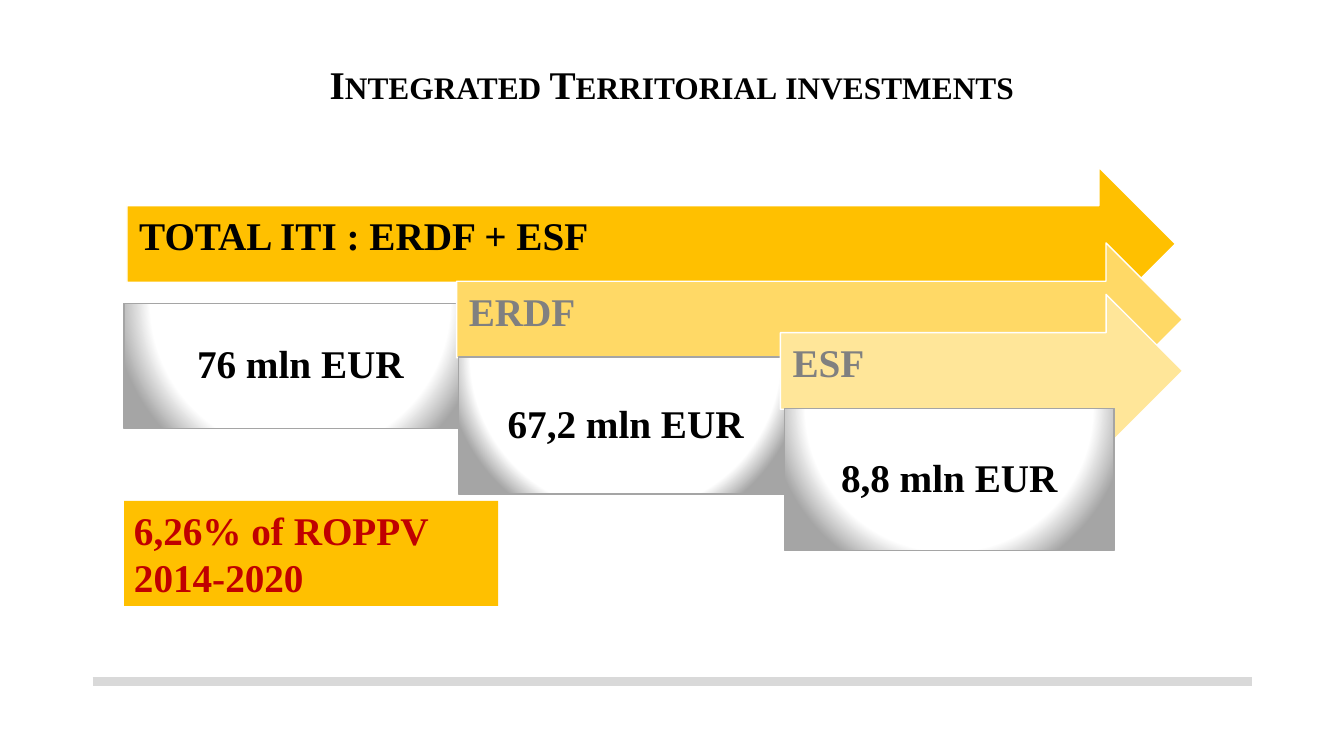
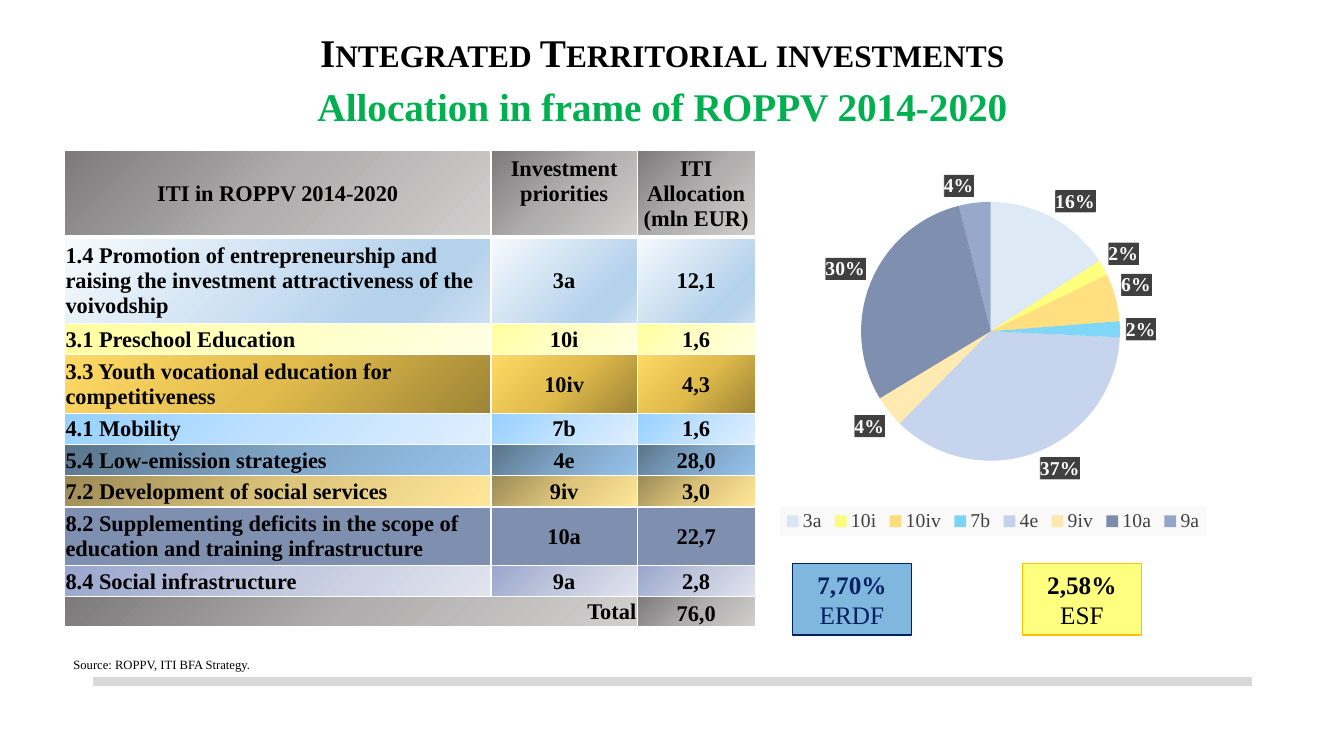
from dataclasses import dataclass

from lxml import etree
from pptx import Presentation
from pptx.chart.data import CategoryChartData
from pptx.dml.color import RGBColor
from pptx.enum.chart import XL_CHART_TYPE, XL_LABEL_POSITION, XL_LEGEND_POSITION
from pptx.enum.shapes import MSO_CONNECTOR, MSO_SHAPE
from pptx.enum.text import MSO_ANCHOR, PP_ALIGN
from pptx.oxml import parse_xml
from pptx.oxml.ns import nsdecls, qn
from pptx.util import Inches, Pt

LEFT, CENTER, RIGHT = PP_ALIGN.LEFT, PP_ALIGN.CENTER, PP_ALIGN.RIGHT
TOP, MIDDLE, BOTTOM = MSO_ANCHOR.TOP, MSO_ANCHOR.MIDDLE, MSO_ANCHOR.BOTTOM
RECTANGLE, ARROW = MSO_SHAPE.RECTANGLE, MSO_SHAPE.RIGHT_ARROW
STRAIGHT = MSO_CONNECTOR.STRAIGHT
PIE = XL_CHART_TYPE.PIE
LEGEND_BOTTOM = XL_LEGEND_POSITION.BOTTOM
OUTSIDE_END = XL_LABEL_POSITION.OUTSIDE_END

BLACK = RGBColor(0x00, 0x00, 0x00)
WHITE = RGBColor(0xFF, 0xFF, 0xFF)
GREY = RGBColor(0x80, 0x80, 0x80)
SILVER = RGBColor(0xA5, 0xA5, 0xA5)
RULE_GREY = RGBColor(0xD9, 0xD9, 0xD9)
CHARCOAL = RGBColor(0x40, 0x40, 0x40)
AMBER = RGBColor(0xFF, 0xC0, 0x00)
GOLD = RGBColor(0xFF, 0xD9, 0x66)
PALE_GOLD = RGBColor(0xFF, 0xE6, 0x99)
YELLOW = RGBColor(0xFF, 0xFF, 0x00)
RED = RGBColor(0xC0, 0x00, 0x00)
GREEN = RGBColor(0x00, 0xB0, 0x50)
NAVY = RGBColor(0x00, 0x20, 0x60)
BLUE = RGBColor(0x00, 0x70, 0xC0)
SKY = RGBColor(0x00, 0xB0, 0xF0)
PALE_BLUE = RGBColor(0xBD, 0xD7, 0xEE)
PERIWINKLE = RGBColor(0x8F, 0xAA, 0xDC)
DEEP_BLUE = RGBColor(0x2F, 0x55, 0x97)

FONT = "Times New Roman"
TITLE = "Integrated Territorial investments"
GRID = Inches(0.1)  # one column or row of the layout grid
DIAGONAL = '<a:lin ang="2700000" scaled="0"/>'
REVERSE = '<a:lin ang="13500000" scaled="0"/>'
CIRCLE = '<a:path path="circle"><a:fillToRect l="{}" t="{}" r="{}" b="{}"/></a:path>'
CORNER = CIRCLE.format(0, 0, 100000, 100000)
BOWL = CIRCLE.format(50000, -80000, 50000, 180000)


@dataclass
class Box:
    """A region in grid columns and rows."""
    left: float
    top: float
    width: float
    height: float

    def inner(self, left, top, width, height):
        return Box(self.left + left, self.top + top, width, height)

    def place(self):
        return [round(n * GRID) for n in (self.left, self.top, self.width, self.height)]


@dataclass
class Gradient:
    stops: list
    direction: str = DIAGONAL


@dataclass
class Tint:
    """A colour at half strength."""
    color: RGBColor


def three_step(start, middle, end, direction=DIAGONAL):
    return Gradient([(0, start), (50, middle), (100, end)], direction)


def apply(target, values):
    for name, value in values.items():
        setattr(target, name, value)


def paint(fill, look):
    """Fill with a colour, a Tint or a Gradient."""
    fill.solid()
    fill.fore_color.rgb = look.color if isinstance(look, Tint) else WHITE
    solid = fill._xPr.find(qn("a:solidFill"))
    if isinstance(look, Tint):
        etree.SubElement(solid[0], qn("a:alpha"), val="50000")
    elif isinstance(look, Gradient):
        stops = "".join(
            f'<a:gs pos="{position * 1000}"><a:srgbClr val="{color}"/></a:gs>'
            for position, color in look.stops)
        solid.getparent().replace(solid, parse_xml(
            f'<a:gradFill {nsdecls("a")} rotWithShape="1"><a:gsLst>{stops}</a:gsLst>'
            f'{look.direction}</a:gradFill>'))
    else:
        fill.fore_color.rgb = look


def set_font(font, size, color, bold=False):
    apply(font, {"name": FONT, "size": Pt(size), "bold": bold})
    font.color.rgb = color


def write(frame, lines, align=LEFT, spacing=None):
    """Each line is (text, size, color, bold) with an optional small-caps flag."""
    for index, (text, size, color, bold, *small) in enumerate(lines):
        paragraph = frame.add_paragraph() if index else frame.paragraphs[0]
        apply(paragraph, {"alignment": align, "line_spacing": spacing})
        run = paragraph.add_run()
        run.text = text
        set_font(run.font, size, color, bold)
        if small:
            run._r.get_or_add_rPr().set("cap", "small")


def add_text(slide, box, lines, anchor=TOP, **style):
    frame = slide.shapes.add_textbox(*box.place()).text_frame
    apply(frame, {"word_wrap": True, "vertical_anchor": anchor})
    write(frame, lines, **style)


def add_block(slide, kind, box, look, lines, line=None, margins=None, anchor=MIDDLE, **style):
    shape = slide.shapes.add_shape(kind, *box.place())
    shape.shadow.inherit = False
    paint(shape.fill, look)
    if line:
        shape.line.color.rgb = line
        shape.line.width = Pt(1)
    else:
        shape.line.fill.background()
    frame = shape.text_frame
    apply(frame, {"word_wrap": True, "vertical_anchor": anchor})
    if margins:
        sides = ("margin_left", "margin_top", "margin_right", "margin_bottom")
        apply(frame, dict(zip(sides, map(Inches, margins))))
    write(frame, lines, **style)


def new_slide(presentation):
    """Blank slide with the shared bottom rule."""
    slide = presentation.slides.add_slide(presentation.slide_layouts[6])
    left, top, width, _ = Box(9.2, 67.6, 115, 0).place()
    rule = slide.shapes.add_connector(STRAIGHT, left, top, left + width, top)
    rule.line.color.rgb = RULE_GREY
    rule.line.width = Pt(6)
    etree.SubElement(rule._element.spPr, qn("a:effectLst"))
    return slide


# Funding cascade: label, arrow (left, top, width), look, text colour,
# amount, amount box, end of the white zone in percent
FUNDING = [
    ("TOTAL ITI : ERDF + ESF", (0.3, 0, 104), AMBER, BLACK,
     "76 mln EUR", (0, 13.5, 35, 12.4), 80),
    ("ERDF", (33, 7.5, 72), GOLD, GREY, "67,2 mln EUR", (33.2, 18.8, 33.1, 13.6), 86),
    ("ESF", (65.1, 12.6, 39.9), PALE_GOLD, GREY, "8,8 mln EUR", (65.5, 23.9, 32.7, 14.1), 80),
]
ARROW_HEIGHT = 15.2


def funding_cascade(slide, box):
    for label, arrow, look, color, amount, amount_box, white_end in FUNDING:
        add_block(slide, ARROW, box.inner(*arrow, ARROW_HEIGHT), look,
                  [(label, 28, color, True)], line=WHITE,
                  margins=(0.12, 0.12, 0.28, 0.24), spacing=0.9)
        bowl = Gradient([(0, WHITE), (white_end, WHITE), (100, SILVER)], BOWL)
        add_block(slide, RECTANGLE, box.inner(*amount_box), bowl,
                  [(amount, 28, BLACK, True)], line=SILVER,
                  margins=(0.12,) * 4, align=CENTER, spacing=0.9)
    # Share of the programme
    add_block(slide, RECTANGLE, box.inner(0, 33.1, 37.1, 10.4), AMBER,
              [("6,26% of ROPPV 2014-2020", 28, RED, True)], anchor=TOP)


STEEL = three_step("7C7A7A", "B0AEAE", "D1CECE")
COLUMNS = (42.3, 14.5, 11.7)
HEADER = ("ITI in ROPPV 2014-2020", "Investment\npriorities", "ITI Allocation (mln EUR)")
# Row height, look, cell texts
ROWS = [
    (8.6, STEEL, HEADER),
    (8.6, Gradient([(0, "F7FAFD"), (74, "B5D2EC"), (83, "B5D2EC"), (100, "CEE1F2")]),
     ("1.4 Promotion of entrepreneurship and raising the investment attractiveness "
      "of the voivodship", "3a", "12,1")),
    (3.1, three_step("FFFFA0", "FFFFC5", "FFFFE3"), ("3.1 Preschool Education", "10i", "1,6")),
    (5.8, three_step("9E8436", "E1BC4C", "FFD966", REVERSE),
     ("3.3 Youth vocational education for competitiveness", "10iv", "4,3")),
    (3.1, three_step("96D0FF", "BFE1FF", "E0EFFF"), ("4.1 Mobility", "7b", "1,6")),
    (3.1, three_step("5A748B", "7FA5C6", "97C3EB"), ("5.4 Low-emission strategies", "4e", "28,0")),
    (3.1, three_step("9C8A56", "DDC57B", "FFE699", CORNER),
     ("7.2 Development of social services", "9iv", "3,0")),
    (5.8, Tint(NAVY), ("8.2 Supplementing deficits in the scope of education and "
                       "training infrastructure", "10a", "22,7")),
    (3.1, three_step("99A5CC", "C2C8DE", "E1E4EE"), ("8.4 Social infrastructure", "9a", "2,8")),
    (3, STEEL, ("Total", "", "76,0")),
]


def add_borders(cell, top, bottom):
    properties = cell._tc.get_or_add_tcPr()
    for side, width in (("L", 1), ("R", 1), ("T", top), ("B", bottom)):
        properties.append(parse_xml(
            f'<a:ln{side} {nsdecls("a")} w="{Pt(width)}"><a:solidFill>'
            f'<a:srgbClr val="{WHITE}"/></a:solidFill></a:ln{side}>'))


def allocation_table(slide, box):
    table = slide.shapes.add_table(len(ROWS), len(COLUMNS), *box.place()).table
    apply(table, {"first_row": False, "horz_banding": False})
    for column, width in zip(table.columns, COLUMNS):
        column.width = round(width * GRID)
    last = len(ROWS) - 1
    table.cell(last, 0).merge(table.cell(last, 1))
    for row, (height, look, texts) in enumerate(ROWS):
        table.rows[row].height = round(height * GRID)
        for column, text in enumerate(texts):
            cell = table.cell(row, column)
            add_borders(cell, 3 if row == 1 else 1, 3 if row == 0 else 1)
            paint(cell.fill, look)
            apply(cell, {"margin_left": Inches(0.01), "margin_right": Inches(0.01),
                         "margin_top": Inches(0.01), "margin_bottom": 0,
                         "vertical_anchor": MIDDLE})
            align = LEFT if column == 0 and row else CENTER
            if row == last:
                align = CENTER if column else RIGHT
                cell.vertical_anchor = BOTTOM if column else MIDDLE
            elif row == 0 and column == 1:
                apply(cell, {"vertical_anchor": TOP, "margin_top": Inches(0.06)})
            if text:
                write(cell.text_frame, [(line, 16, BLACK, True) for line in text.split("\n")],
                      align=align)


PRIORITIES = [
    ("3a", 16, PALE_BLUE), ("10i", 2, YELLOW), ("10iv", 6, AMBER), ("7b", 2, SKY),
    ("4e", 37, PERIWINKLE), ("9iv", 4, GOLD), ("10a", 30, NAVY), ("9a", 4, DEEP_BLUE),
]


def set_layout(element, index, inner, **shares):
    for old in element.findall(qn("c:layout")):
        element.remove(old)
    target = '<c:layoutTarget val="inner"/>' if inner else ""
    modes = "".join(f'<c:{name}Mode val="edge"/>' for name in "xy")
    values = "".join(f'<c:{name} val="{value}"/>' for name, value in shares.items())
    element.insert(index, parse_xml(
        f'<c:layout {nsdecls("c")}><c:manualLayout>{target}{modes}{values}'
        '</c:manualLayout></c:layout>'))


def set_backdrop(element, fill):
    element.find(qn("c:txPr")).addprevious(
        parse_xml(f'<c:spPr {nsdecls("c", "a")}>{fill}</c:spPr>'))


def priority_pie(slide, box):
    names, values, colors = zip(*PRIORITIES)
    data = CategoryChartData()
    data.categories = names
    data.add_series("Series 1", values)
    chart = slide.shapes.add_chart(PIE, *box.place(), data).chart
    set_font(chart.font, 14, BLACK)
    apply(chart, {"has_title": False, "has_legend": True})
    plot = chart.plots[0]
    plot.vary_by_categories = True
    series = plot.series[0]
    for index, color in enumerate(colors):
        look = series.points[index].format
        paint(look.fill, Tint(color))
        look.line.fill.background()
    # Percent labels on a dark hatch
    labels = series.data_labels
    apply(labels, {"show_value": False, "show_percentage": True, "number_format": "0%",
                   "number_format_is_linked": False, "position": OUTSIDE_END})
    set_font(labels.font, 14, WHITE, True)
    set_backdrop(labels._element,
                 f'<a:pattFill prst="dkVert"><a:fgClr><a:srgbClr val="{CHARCOAL}"/></a:fgClr>'
                 '<a:bgClr><a:srgbClr val="595959"/></a:bgClr></a:pattFill>')
    # Legend and plot positions
    apply(chart.legend, {"position": LEGEND_BOTTOM, "include_in_layout": False})
    set_font(chart.legend.font, 14, CHARCOAL)
    set_backdrop(chart.legend._element, '<a:solidFill><a:srgbClr val="F9F9F9"/></a:solidFill>')
    set_layout(chart.legend._element, 1, False, x=0.11, y=0.92, w=0.79, h=0.08)
    plot_area = chart._chartSpace.find(".//" + qn("c:plotArea"))
    set_layout(plot_area, 0, True, x=0.26, y=0.11, w=0.48, h=0.69)


# Share, fund, fill, line and text colours
FUND_SHARES = [("7,70%", "ERDF", BLUE, NAVY, NAVY), ("2,58%", "ESF", YELLOW, AMBER, BLACK)]


def fund_shares(slide, box):
    width = 11.8
    step = box.width - width
    for index, (share, fund, fill, line, color) in enumerate(FUND_SHARES):
        add_block(slide, RECTANGLE, box.inner(index * step, 0, width, box.height), Tint(fill),
                  [(share, 18, color, True), (fund, 18, color, False)], line=line, align=CENTER)


def main():
    presentation = Presentation()
    apply(presentation, {"slide_width": Inches(13.33), "slide_height": Inches(7.5)})
    title = (TITLE, 28, BLACK, True, True)

    cascade = new_slide(presentation)
    funding_cascade(cascade, Box(12.3, 16.6, 105, 43.5))
    add_text(cascade, Box(0, 5.5, 133.3, 5.7), [title], align=CENTER)

    allocation = new_slide(presentation)
    add_text(allocation, Box(15.7, 4, 100, 7),
             [title, ("Allocation in frame of ROPPV 2014-2020", 28, GREEN, True)],
             anchor=MIDDLE, align=CENTER, spacing=1.15)
    allocation_table(allocation, Box(6.4, 14.9, 68.5, 47.5))
    fund_shares(allocation, Box(78.6, 55.9, 34.6, 7.1))
    priority_pie(allocation, Box(71.5, 15.9, 53.5, 37.3))
    add_text(allocation, Box(6.3, 64.7, 24.1, 2.5),
             [("Source: ROPPV, ITI BFA Strategy.", 9, BLACK, False)])

    presentation.save("out.pptx")


if __name__ == "__main__":
    main()
